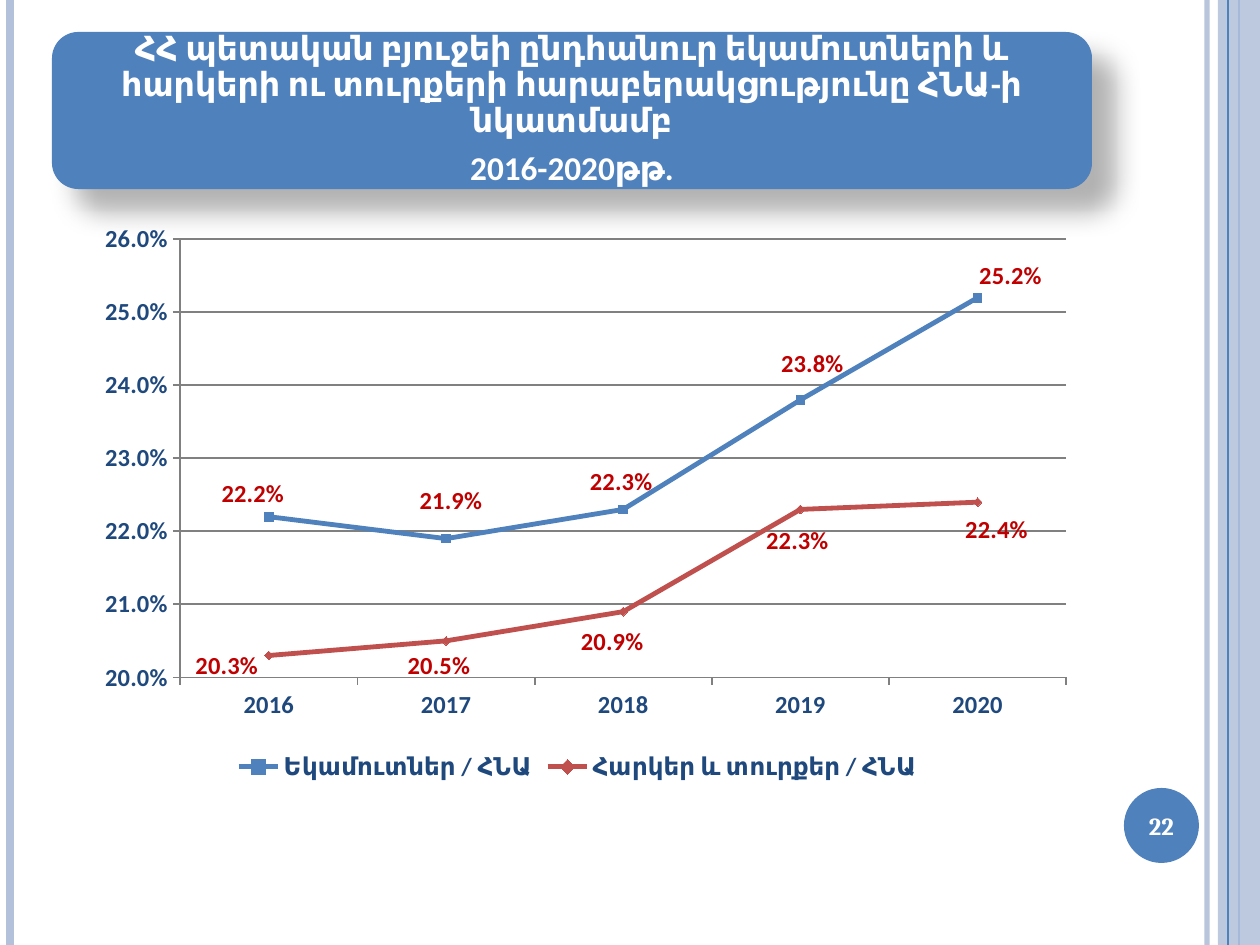
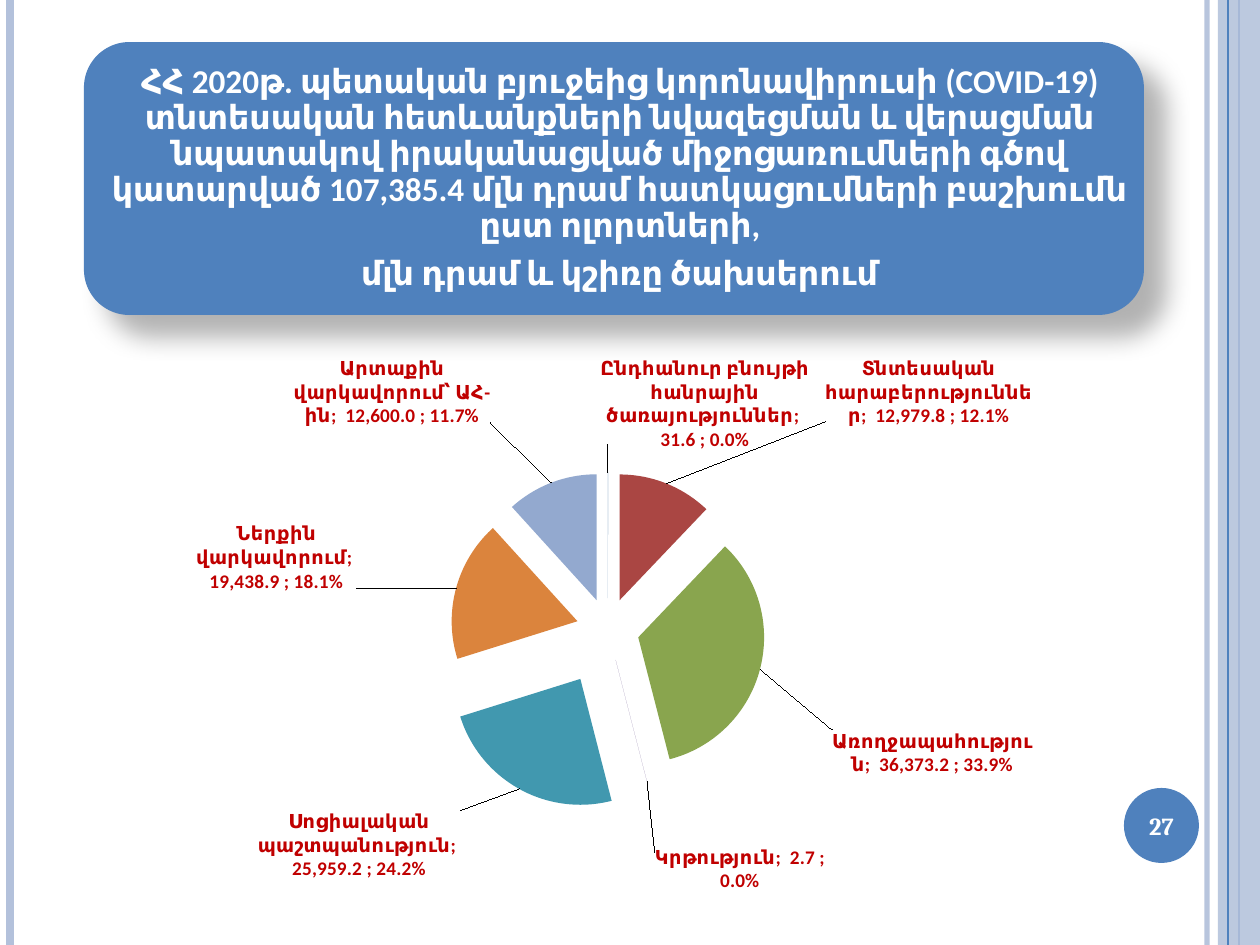
from dataclasses import dataclass

from lxml import etree
from pptx import Presentation
from pptx.chart.data import CategoryChartData
from pptx.dml.color import RGBColor
from pptx.enum.chart import XL_CHART_TYPE as CT, XL_LABEL_POSITION as LP
from pptx.enum.chart import XL_LEGEND_POSITION, XL_MARKER_STYLE as MS, XL_TICK_MARK
from pptx.enum.shapes import MSO_CONNECTOR, MSO_SHAPE
from pptx.enum.text import MSO_ANCHOR, MSO_AUTO_SIZE, PP_ALIGN
from pptx.oxml.ns import qn
from pptx.util import Emu, Pt

# Shared look
PX_PER_INCH = 126
WIDTH, HEIGHT = 1260, 945
BLUE, PALE, RED, NAVY = "4F81BD", "B3C1DB", "C0504D", "1F497D"
WHITE, BLACK, LABEL_RED, GRID = "FFFFFF", "000000", "C00000", "808080"
BODY_FONT, NUMBER_FONT = "Calibri", "Cambria"


@dataclass
class Box:
    left: int
    top: int
    width: int
    height: int

    def emu(self) -> list[Emu]:
        return [px(n) for n in (self.left, self.top, self.width, self.height)]


@dataclass
class Rule:
    x: int
    weight: float
    color: str
    opacity: int = 100


@dataclass
class LineSeries:
    name: str
    values: list[float]
    color: str
    marker: MS
    side: LP
    shifts: list[tuple[int, int]]


@dataclass
class Slice:
    name: str
    value: float
    color: str
    shift: tuple[int, int]


RULES_BELOW = [Rule(1207, 3, PALE, 93), Rule(10, 4.5, PALE), Rule(1239, 1.5, BLUE)]
SIDE_BAND = Box(1218, 0, 42, HEIGHT)
RULE_ABOVE = Rule(1228, 0.75, BLUE)
NUMBER_DISC = Box(1124, 788, 75, 75)

YEARS = ["2016", "2017", "2018", "2019", "2020"]
RATIOS = [
    LineSeries("Եկամուտներ / ՀՆԱ", [0.222, 0.219, 0.223, 0.238, 0.252], BLUE,
               MS.SQUARE, LP.ABOVE,
               [(-16, 2), (5, -13), (-2, -3), (12, -11), (33, 3)]),
    LineSeries("Հարկեր և տուրքեր / ՀՆԱ", [0.203, 0.205, 0.209, 0.223, 0.224], RED,
               MS.DIAMOND, LP.BELOW,
               [(-42, -14), (-7, 1), (-11, 6), (-3, 7), (19, 3)]),
]
SECTORS = [
    Slice("Ընդհանուր բնույթի հանրային ծառայություններ", 31.6, "4572A7", (97, -20)),
    Slice("Տնտեսական հարաբերություններ", 12979.8, "AA4643", (156, -55)),
    Slice("Առողջապահություն", 36373.2, "89A54E", (65, 59)),
    Slice("Կրթություն", 2.7, "71588F", (6, 64)),
    Slice("Սոցիալական պաշտպանություն", 25959.2, "4198AF", (-55, 15)),
    Slice("Ներքին վարկավորում", 19438.9, "DB843D", (-92, 7)),
    Slice("Արտաքին վարկավորում՝ ԱՀ-ին", 12600.0, "93A9CF", (-58, -53)),
]
PULLED_SECTOR = 4


# Basic helpers
def px(n: float) -> Emu:
    return Emu(round(n * 914400 / PX_PER_INCH))


def rgb(color: str) -> RGBColor:
    return RGBColor.from_string(color)


def sub(parent, tag: str, **attrs):
    return etree.SubElement(parent, qn(tag), {k: str(v) for k, v in attrs.items()})


def node(tag: str, **attrs):
    return etree.Element(qn(tag), {k: str(v) for k, v in attrs.items()})


def set_opacity(shape, percent: int) -> None:
    for clr in shape.element.find(qn("p:spPr")).iter(qn("a:srgbClr")):
        sub(clr, "a:alpha", val=percent * 1000)


def set_font(font, size: float, color: str, bold: bool = True,
             name: str = BODY_FONT) -> None:
    font.size, font.bold, font.name = Pt(size), bold, name
    font.color.rgb = rgb(color)


def write(sp, *lines: str, size: float, font: str = BODY_FONT, margin: int = 0,
          line_spacing: float = 1.0, space_after: float = 0) -> None:
    tf = sp.text_frame
    tf.word_wrap, tf.auto_size = True, MSO_AUTO_SIZE.NONE
    tf.vertical_anchor = MSO_ANCHOR.MIDDLE
    tf.margin_left = tf.margin_right = tf.margin_top = tf.margin_bottom = px(margin)
    for i, line in enumerate(lines):
        p = tf.paragraphs[0] if i == 0 else tf.add_paragraph()
        p.alignment, p.line_spacing = PP_ALIGN.CENTER, line_spacing
        p.space_before, p.space_after = Pt(0), Pt(space_after)
        r = p.add_run()
        r.text = line
        set_font(r.font, size, WHITE, name=font)


def add_block(s, kind: MSO_SHAPE, box: Box, color: str):
    sp = s.shapes.add_shape(kind, *box.emu())
    sp.shadow.inherit = False
    sp.fill.solid()
    sp.fill.fore_color.rgb = rgb(color)
    sp.line.fill.background()
    return sp


def add_rule(s, rule: Rule) -> None:
    cxn = s.shapes.add_connector(MSO_CONNECTOR.STRAIGHT, px(rule.x), 0,
                                 px(rule.x), px(HEIGHT))
    cxn.line.width = Pt(rule.weight)
    cxn.line.color.rgb = rgb(rule.color)
    if rule.opacity < 100:
        set_opacity(cxn, rule.opacity)
    sub(cxn.element.find(qn("p:spPr")), "a:effectLst")


# Slide frame and title banner
def add_frame(s, number: int) -> None:
    for rule in RULES_BELOW:
        add_rule(s, rule)
    set_opacity(add_block(s, MSO_SHAPE.RECTANGLE, SIDE_BAND, PALE), 87)
    add_rule(s, RULE_ABOVE)
    disc = add_block(s, MSO_SHAPE.OVAL, NUMBER_DISC, BLUE)
    write(disc, str(number), size=14, font=NUMBER_FONT)


def add_banner(s, banner: Box, text_box: Box, *lines: str) -> None:
    sp = add_block(s, MSO_SHAPE.ROUNDED_RECTANGLE, banner, BLUE)
    effects = sp.element.spPr.find(qn("a:effectLst"))
    shadow = sub(effects, "a:outerShdw", blurRad=Pt(15), dist=Pt(18),
                 dir=45 * 60000, algn="tl", rotWithShape=0)
    sub(sub(shadow, "a:srgbClr", val=BLACK), "a:alpha", val=30000)
    title = s.shapes.title
    title.left, title.top, title.width, title.height = text_box.emu()
    write(title, *lines, size=19, margin=10, line_spacing=0.9, space_after=7)
    sp.element.addnext(title.element)


def new_slide(prs, number: int, banner: Box, text_box: Box, *lines: str):
    s = prs.slides.add_slide(prs.slide_layouts[5])
    add_frame(s, number)
    add_banner(s, banner, text_box, *lines)
    return s


# Chart helpers
def add_chart(s, kind: CT, box: Box, data: CategoryChartData):
    chart = s.shapes.add_chart(kind, *box.emu(), data).chart
    chart.has_title = chart.has_legend = False
    set_font(chart.font, 10, BLACK, bold=False, name=NUMBER_FONT)
    return chart


def set_plot_layout(chart, x: float, y: float, w: float, h: float) -> None:
    area = next(chart.element.iter(qn("c:plotArea")))
    for old in area.findall(qn("c:layout")):
        area.remove(old)
    layout = node("c:layout")
    manual = sub(layout, "c:manualLayout")
    for tag, val in (("layoutTarget", "inner"), ("xMode", "edge"), ("yMode", "edge"),
                     ("x", x), ("y", y), ("w", w), ("h", h)):
        sub(manual, f"c:{tag}", val=val)
    area.insert(0, layout)


def label_points(series, size: float, side: LP, count: int) -> None:
    labels = series.data_labels
    labels.show_value = True
    labels.number_format, labels.number_format_is_linked = "0.0%", False
    set_font(labels.font, size, LABEL_RED)
    for i in range(count):
        label = series.points[i].data_label
        set_font(label.font, size, LABEL_RED)
        label.position = side


def shift_labels(chart, box: Box, shifts: list[tuple[int, int]]) -> None:
    for label, (dx, dy) in zip(chart.element.iter(qn("c:dLbl")), shifts):
        layout = node("c:layout")
        manual = sub(layout, "c:manualLayout")
        sub(manual, "c:x", val=round(dx / box.width, 4))
        sub(manual, "c:y", val=round(dy / box.height, 4))
        label.insert(1, layout)
        layout.addnext(node("c:numFmt", formatCode="0.0%", sourceLinked=0))


def set_flag(chart, tag: str, on: bool) -> None:
    for flag in chart.element.iter(qn(tag)):
        flag.set("val", str(int(on)))


# Line chart of ratios to GDP
def add_ratio_chart(s, box: Box) -> None:
    data = CategoryChartData(number_format="0.0%")
    data.categories = YEARS
    for item in RATIOS:
        data.add_series(item.name, item.values)
    chart = add_chart(s, CT.LINE_MARKERS, box, data)
    set_plot_layout(chart, 0.114, 0.034, 0.861, 0.773)
    chart.has_legend = True
    chart.legend.position = XL_LEGEND_POSITION.BOTTOM
    chart.legend.include_in_layout = False
    set_font(chart.legend.font, 14, NAVY)

    val = chart.value_axis
    val.minimum_scale, val.maximum_scale, val.major_unit = 0.2, 0.26, 0.01
    val.has_major_gridlines = True
    val.tick_labels.number_format = "0.0%"
    val.tick_labels.number_format_is_linked = False
    for axis in (chart.category_axis, val):
        axis.major_tick_mark = XL_TICK_MARK.OUTSIDE
        set_font(axis.tick_labels.font, 14, NAVY)
    for line in (val.format.line, chart.category_axis.format.line,
                 val.major_gridlines.format.line):
        line.width, line.color.rgb = Pt(1), rgb(GRID)

    for series, item in zip(chart.plots[0].series, RATIOS):
        series.smooth = False
        series.format.line.width = Pt(2.75)
        series.format.line.color.rgb = rgb(item.color)
        series.marker.style, series.marker.size = item.marker, 5
        series.marker.format.fill.solid()
        series.marker.format.fill.fore_color.rgb = rgb(item.color)
        series.marker.format.line.color.rgb = rgb(item.color)
        label_points(series, 14, item.side, len(YEARS))
    shift_labels(chart, box, [shift for item in RATIOS for shift in item.shifts])
    set_flag(chart, "c:showLeaderLines", False)


# Exploded pie of spending by sector
def add_sector_chart(s, box: Box) -> None:
    data = CategoryChartData(number_format="_(#,##0.0_)")
    data.categories = [item.name for item in SECTORS]
    data.add_series("Series 1", [item.value for item in SECTORS])
    chart = add_chart(s, CT.PIE, box, data)
    set_plot_layout(chart, 0.146, 0.215, 0.706, 0.587)
    plot = chart.plots[0]
    plot.vary_by_categories = True
    series = plot.series[0]
    for i, item in enumerate(SECTORS):
        fill = series.points[i].format.fill
        fill.solid()
        fill.fore_color.rgb = rgb(item.color)
    label_points(series, 11, LP.OUTSIDE_END, len(SECTORS))
    shift_labels(chart, box, [item.shift for item in SECTORS])
    for tag in ("c:showCatName", "c:showPercent", "c:showLeaderLines"):
        set_flag(chart, tag, True)
    for flag in list(chart.element.iter(qn("c:showBubbleSize"))):
        separator = node("c:separator")
        separator.text = "; "
        flag.addnext(separator)

    ser = next(chart.element.iter(qn("c:ser")))
    ser.find(qn("c:tx")).addnext(node("c:explosion", val=25))
    pulled = ser.findall(qn("c:dPt"))[PULLED_SECTOR]
    pulled.find(qn("c:spPr")).addprevious(node("c:explosion", val=45))


def main() -> None:
    prs = Presentation()
    prs.slide_width, prs.slide_height = px(WIDTH), px(HEIGHT)

    s = new_slide(
        prs, 22, Box(52, 32, 1040, 157), Box(58, 39, 1028, 142),
        "ՀՀ պետական բյուջեի ընդհանուր եկամուտների և հարկերի ու տուրքերի "
        "հարաբերակցությունը ՀՆԱ-ի նկատմամբ",
        "2016-2020թթ.")
    add_ratio_chart(s, Box(63, 220, 1029, 567))

    s = new_slide(
        prs, 27, Box(84, 42, 1060, 273), Box(84, 0, 1072, 357),
        "ՀՀ 2020թ. պետական բյուջեից կորոնավիրուսի (COVID-19) տնտեսական "
        "հետևանքների նվազեցման և վերացման նպատակով իրականացված միջոցառումների "
        "գծով կատարված 107,385.4 մլն դրամ հատկացումների բաշխումն ըստ ոլորտների,",
        "մլն դրամ և կշիռը ծախսերում")
    add_sector_chart(s, Box(84, 357, 1050, 536))

    prs.save("out.pptx")


if __name__ == "__main__":
    main()
